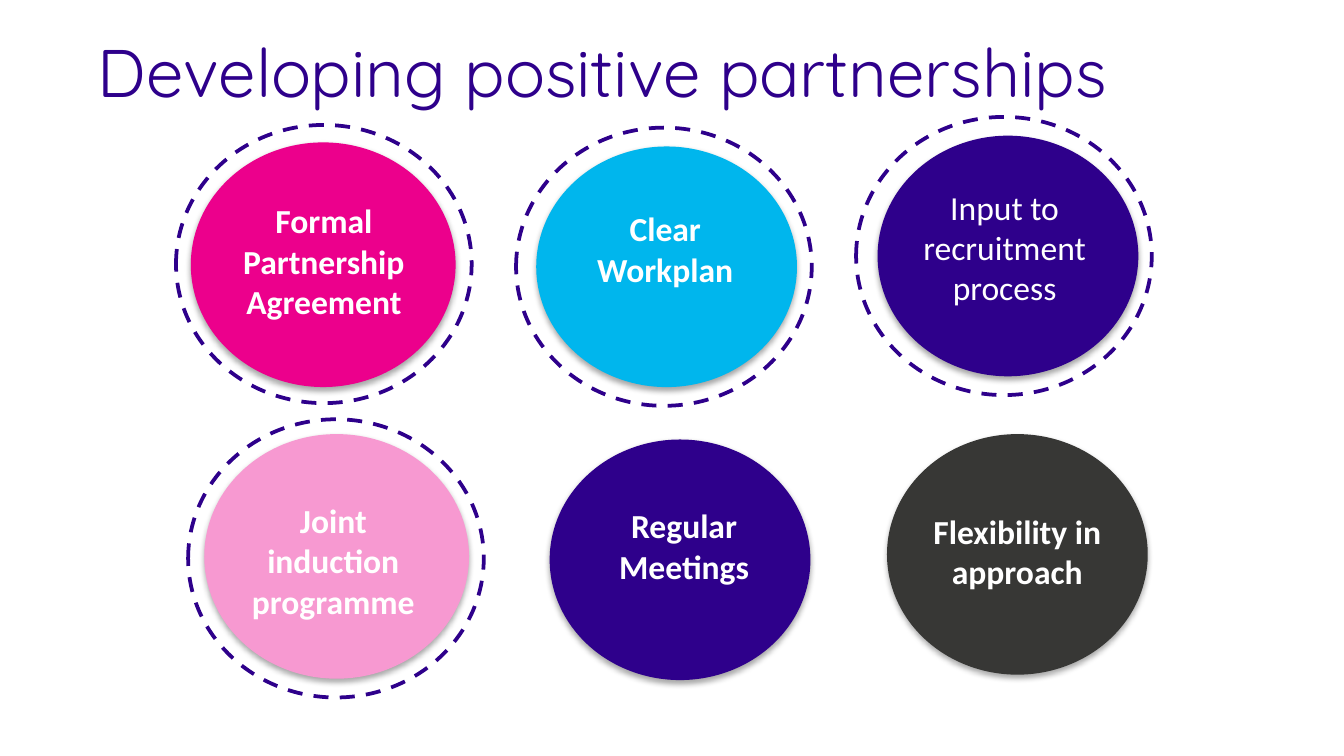
import lxml.etree
import pptx
import pptx.dml.color
import pptx.enum.dml
import pptx.enum.shapes
import pptx.enum.text
import pptx.oxml.ns
import pptx.util

Inches = pptx.util.Inches

# Content: disc and ring give left and top; label gives left, top and width
TITLE = "Developing positive partnerships"
TOPICS = [
    dict(lines=["Formal Partnership Agreement"], color="pink", size="large",
         disc=(1.42, 1.06), label=(1.52, 1.44, 1.78), ring=(1.31, 0.93)),
    dict(lines=["Clear Workplan"], color="blue", size="small",
         disc=(3.99, 1.09), label=(4.10, 1.50, 1.70), ring=(3.84, 0.95)),
    dict(lines=["Input to recruitment process"], color="purple", size="small",
         disc=(6.53, 1.01), label=(6.60, 1.34, 1.75), ring=(6.37, 0.87), bold=False),
    dict(lines=["Joint", "induction", "programme"], color="light pink", size="large",
         disc=(1.52, 3.23), label=(1.54, 3.67, 1.88), ring=(1.40, 3.12)),
    dict(lines=["Regular Meetings"], color="purple", size="small",
         disc=(4.09, 3.27), label=(4.24, 3.71, 1.70)),
    dict(lines=["Flexibility in approach"], color="grey", size="small",
         disc=(6.60, 3.23), label=(6.72, 3.75, 1.70)),
]

THEME = {
    "colors": {"purple": "2E008B", "pink": "EC008C", "blue": "00B6ED",
               "light pink": "F799D1", "grey": "373735", "white": "FFFFFF"},
    "title": {"name": "Quicksand", "size": pptx.util.Pt(36), "bold": False},
    "label": {"name": "Calibri", "size": pptx.util.Pt(18), "bold": True},
}
DISC_SIZES = {"large": (1.97, 1.82), "small": (1.94, 1.79)}
RING_SIZE = (2.20, 2.07)
LINE_HEIGHT, MARGIN = 0.30, 0.05


def color(name):
    return pptx.dml.color.RGBColor.from_string(THEME["colors"][name])


def add_ellipse(slide, position, size):
    shape = slide.shapes.add_shape(pptx.enum.shapes.MSO_SHAPE.OVAL,
                                   *map(Inches, position + size))
    shape.shadow.inherit = False
    return shape


def add_disc(slide, topic):
    shape = add_ellipse(slide, topic["disc"], DISC_SIZES[topic["size"]])
    shape.fill.solid()
    shape.fill.fore_color.rgb = color(topic["color"])
    shape.line.fill.background()
    # Soft shadow straight below the disc
    effects = shape._element.spPr.find(pptx.oxml.ns.qn("a:effectLst"))
    shadow = lxml.etree.SubElement(
        effects, pptx.oxml.ns.qn("a:outerShdw"),
        blurRad="40000", dist="23000", dir="5400000", rotWithShape="0")
    tint = lxml.etree.SubElement(shadow, pptx.oxml.ns.qn("a:srgbClr"), val="000000")
    lxml.etree.SubElement(tint, pptx.oxml.ns.qn("a:alpha"), val="35000")


def add_ring(slide, position):
    shape = add_ellipse(slide, position, RING_SIZE)
    shape.fill.background()
    shape.line.color.rgb = color("purple")
    shape.line.width = pptx.util.Pt(2)
    shape.line.dash_style = pptx.enum.dml.MSO_LINE.DASH


def add_text(slide, box, lines, font, color_name, alignment):
    frame = slide.shapes.add_textbox(*map(Inches, box)).text_frame
    frame.word_wrap = True
    for index, line in enumerate(lines):
        paragraph = frame.paragraphs[0] if index == 0 else frame.add_paragraph()
        paragraph.alignment = alignment
        run = paragraph.add_run()
        run.text = line
        for attribute, value in font.items():
            setattr(run.font, attribute, value)
        run.font.color.rgb = color(color_name)


def main():
    presentation = pptx.Presentation()
    # Widescreen, 16 to 9
    presentation.slide_width = Inches(10)
    presentation.slide_height = Inches(10 * 9 / 16)
    slide = presentation.slides.add_slide(presentation.slide_layouts[6])
    align = pptx.enum.text.PP_ALIGN

    # Title
    add_text(slide, (0.63, 0.18, 7.85, 0.74), [TITLE], THEME["title"], "purple", align.LEFT)

    # Discs with their labels
    for topic in TOPICS:
        add_disc(slide, topic)
        line_count = 2 if topic["size"] == "small" and topic.get("bold", True) else 3
        box = topic["label"] + (line_count * LINE_HEIGHT + 2 * MARGIN,)
        font = {**THEME["label"], "bold": topic.get("bold", True)}
        add_text(slide, box, topic["lines"], font, "white", align.CENTER)

    # Dashed rings
    for topic in TOPICS:
        if "ring" in topic:
            add_ring(slide, topic["ring"])

    presentation.save("out.pptx")


if __name__ == "__main__":
    main()
